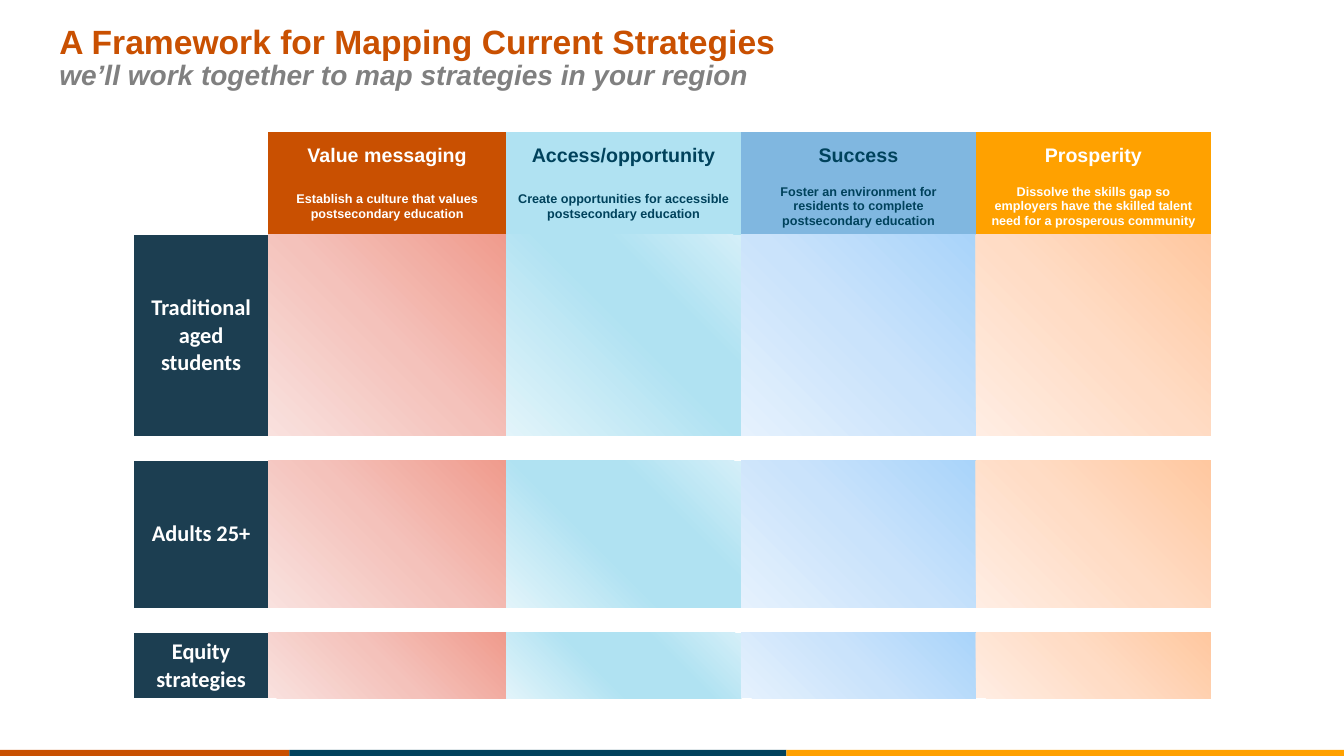
from lxml.etree import SubElement
from pptx import Presentation
from pptx.dml.color import RGBColor
from pptx.enum.shapes import MSO_SHAPE
from pptx.enum.text import MSO_ANCHOR, PP_ALIGN
from pptx.oxml.ns import qn
from pptx.util import Inches, Pt

THEME = {
    "rust": "C95001", "navy": "00425C", "amber": "FFA100", "ice": "B0E2F2",
    "blue": "80B7E0", "slate": "1C3E51", "gray": "808080", "white": "FFFFFF",
    "title": {"name": "Arial", "size": Pt(24), "bold": True},
    "subtitle": {"name": "Arial", "size": Pt(20), "bold": True, "italic": True},
    "heading": {"name": "Arial", "size": Pt(14), "bold": True},
    "detail": {"name": "Arial", "size": Pt(9), "bold": True},
    "label": {"name": "Calibri", "size": Pt(16), "bold": True},
    "no_grid": "{2D5ABB26-0587-4C30-8999-92F81FD0307C}",
}

TITLE = [
    ("A Framework for Mapping Current Strategies", "title", "rust"),
    ("we’ll work together to map strategies in your region", "subtitle", "gray"),
]
TOP_RIGHT = {"l": 100, "b": 100}
BOTTOM_LEFT = {"t": 100, "r": 100}
STAGES = [
    ("Value messaging", "Establish a culture that values postsecondary education",
     "rust", "white", ["F09B8D", "F4C2BB", "F9E1DE"], TOP_RIGHT),
    ("Access/opportunity", "Create opportunities for accessible postsecondary education",
     "ice", "navy", ["E2F4FA", "B0E2F2", "B0E2F2", "D4EFF8"], BOTTOM_LEFT),
    ("Success", "Foster an environment for residents to complete postsecondary education",
     "blue", "navy", ["A9D4FA", "CAE3FB", "E5F1FD"], TOP_RIGHT),
    ("Prosperity",
     "Dissolve the skills gap so employers have the skilled talent need for a prosperous community",
     "amber", "white", ["FFC8A0", "FFDCC5", "FFEDE3"], TOP_RIGHT),
]
GROUPS = [
    (2, ["Traditional aged", "students"], [0, 54, 69, 100]),
    (4, ["Adults 25+"], [0, 41, 68, 100]),
    (6, ["Equity strategies"], [0, 41, 68, 100]),
]
GAP_ROWS = [3, 5]
COL_WIDTHS = [1.33, 2.36, 2.33, 2.33, 2.33]
ROW_HEIGHTS = [0.46, 0.56, 2, 0.24, 1.46, 0.25, 0.65]
TABLE_LEFT, TABLE_TOP = 1.33, 1.31
BAR_EDGES = [-0.01, 2.87, 7.8, 13.35]
BAR_COLORS = ["rust", "navy", "amber"]


def rgb(name):
    return RGBColor.from_string(THEME[name])


def add_run(p, text, style, color):
    r = p.add_run()
    r.text = text
    for key, value in THEME[style].items():
        setattr(r.font, key, value)
    r.font.color.rgb = rgb(color)


def fill_cell(cell, lines, style, color, fill):
    cell.fill.solid()
    cell.fill.fore_color.rgb = rgb(fill)
    cell.vertical_anchor = MSO_ANCHOR.MIDDLE
    tf = cell.text_frame
    for i, line in enumerate(lines):
        p = tf.add_paragraph() if i else tf.paragraphs[0]
        p.alignment = PP_ALIGN.CENTER
        add_run(p, line, style, color)


def shade_cell(cell, colors, stops, focus):
    grad = SubElement(cell._tc.get_or_add_tcPr(), qn("a:gradFill"), rotWithShape="1")
    gs_list = SubElement(grad, qn("a:gsLst"))
    for color, stop in zip(colors, stops):
        gs = SubElement(gs_list, qn("a:gs"), pos=str(stop * 1000))
        SubElement(gs, qn("a:srgbClr"), val=color)
    circle = SubElement(grad, qn("a:path"), {"path": "circle"})
    SubElement(circle, qn("a:fillToRect"), {k: str(v * 1000) for k, v in focus.items()})


def clear_gap(cell):
    cell.fill.solid()
    cell.fill.fore_color.rgb = rgb("white")
    cell.margin_top = cell.margin_bottom = 0
    SubElement(cell.text_frame.paragraphs[0]._p, qn("a:endParaRPr"), sz="400")


def add_bars(s):
    for left, right, color in zip(BAR_EDGES, BAR_EDGES[1:], BAR_COLORS):
        sp = s.shapes.add_shape(MSO_SHAPE.RECTANGLE, Inches(left), Inches(7.44),
                                Inches(right - left), Inches(0.13))
        sp.shadow.inherit = False
        sp.fill.solid()
        sp.fill.fore_color.rgb = rgb(color)
        sp.line.fill.background()


def add_title(s):
    sp = s.shapes.add_textbox(Inches(0.49), Inches(-0.03), Inches(12.35), Inches(1.22))
    tf = sp.text_frame
    tf.word_wrap = True
    tf.vertical_anchor = MSO_ANCHOR.MIDDLE
    p = tf.paragraphs[0]
    p.line_spacing = 0.9
    for i, (text, style, color) in enumerate(TITLE):
        if i:
            p.add_line_break()
        add_run(p, text, style, color)


def add_framework(s):
    frame = s.shapes.add_table(len(ROW_HEIGHTS), len(COL_WIDTHS),
                               Inches(TABLE_LEFT), Inches(TABLE_TOP),
                               Inches(sum(COL_WIDTHS)), Inches(sum(ROW_HEIGHTS)))
    table = frame.table
    table.first_row = table.horz_banding = False
    table._tbl.tblPr.find(qn("a:tableStyleId")).text = THEME["no_grid"]
    for col, width in zip(table.columns, COL_WIDTHS):
        col.width = Inches(width)
    for row, height in zip(table.rows, ROW_HEIGHTS):
        row.height = Inches(height)

    corner = table.cell(0, 0)
    corner.merge(table.cell(1, 0))
    corner.fill.background()
    for c, (heading, detail, fill, color, shades, focus) in enumerate(STAGES, 1):
        fill_cell(table.cell(0, c), [heading], "heading", color, fill)
        fill_cell(table.cell(1, c), [detail], "detail", color, fill)
        for row, _, access_stops in GROUPS:
            stops = access_stops if len(shades) == 4 else [0, 50, 100]
            shade_cell(table.cell(row, c), shades, stops, focus)
    for row, lines, _ in GROUPS:
        fill_cell(table.cell(row, 0), lines, "label", "white", "slate")
    for row in GAP_ROWS:
        for c in range(len(COL_WIDTHS)):
            clear_gap(table.cell(row, c))


def main():
    prs = Presentation()
    prs.slide_width, prs.slide_height = Inches(13.33), Inches(7.5)
    s = prs.slides.add_slide(prs.slide_layouts[6])
    add_bars(s)
    add_title(s)
    add_framework(s)
    prs.save("out.pptx")


if __name__ == "__main__":
    main()
